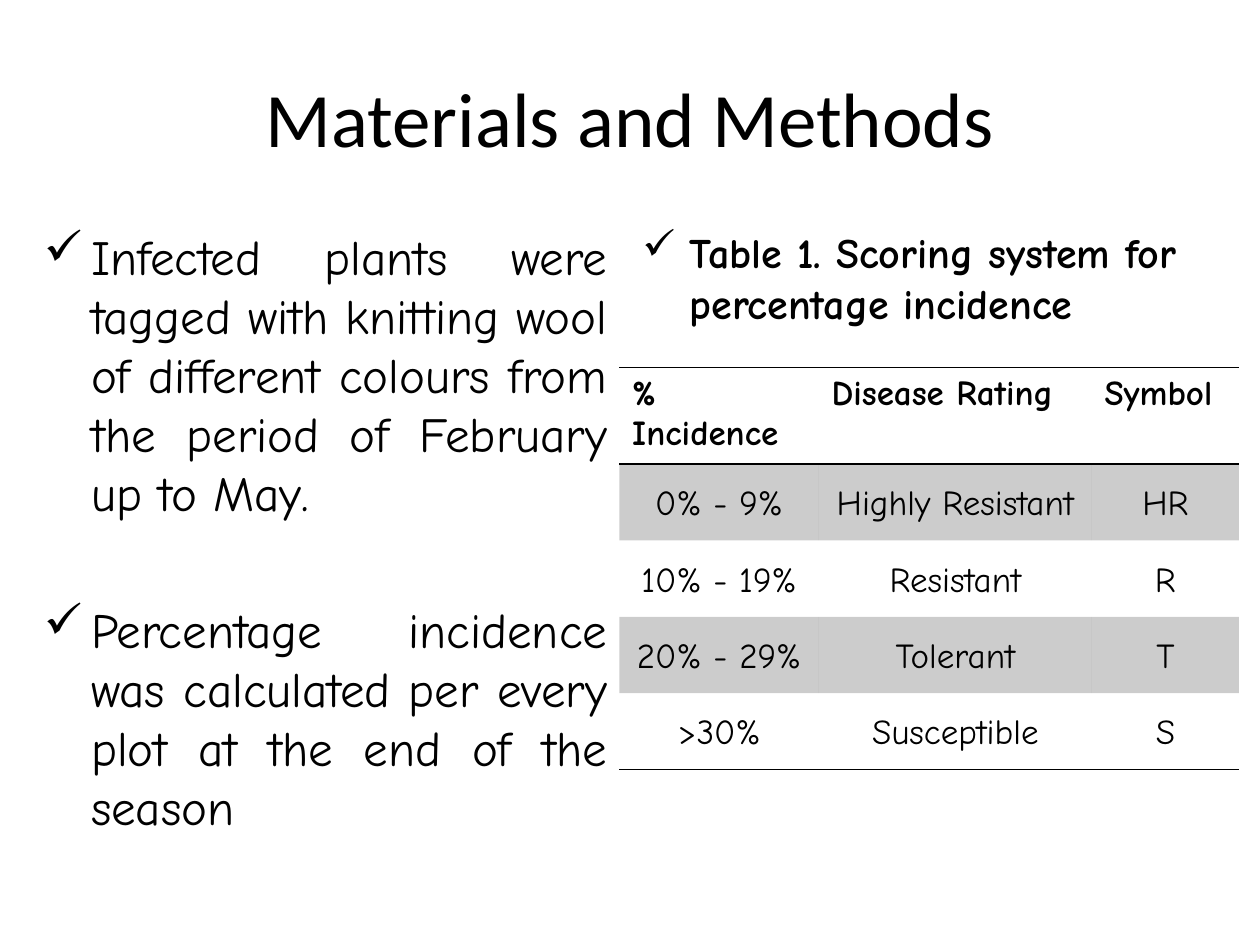
from dataclasses import dataclass

from lxml import etree
from pptx import Presentation
from pptx.dml.color import RGBColor
from pptx.enum.text import MSO_ANCHOR, PP_ALIGN
from pptx.oxml.ns import qn
from pptx.util import Pt

LEFT, CENTER, JUSTIFY = PP_ALIGN.LEFT, PP_ALIGN.CENTER, PP_ALIGN.JUSTIFY
MIDDLE = MSO_ANCHOR.MIDDLE
TITLE_ONLY = 5


@dataclass(frozen=True)
class Theme:
    ink: str = "000000"
    band_opacity: int = 20
    title_font: str = "Calibri"
    body_font: str = "Comic Neue"
    title_size: int = 44
    body_size: int = 28
    caption_size: int = 24
    table_size: int = 20
    indent: int = 27
    rule_width: int = 1


THEME = Theme()
INK = RGBColor.from_string(THEME.ink)

METHODS = [
    "Infected plants were tagged with knitting wool of different colours "
    "from the period of February up to May.",
    "Percentage incidence was calculated per every plot at the end of the season",
]
CAPTION = ["Table 1. Scoring system for percentage incidence"]
SCORES = [
    ("% Incidence", "Disease Rating", "Symbol"),
    ("0% - 9%", "Highly Resistant", "HR"),
    ("10% - 19%", "Resistant", "R"),
    ("20% - 29%", "Tolerant", "T"),
    (">30%", "Susceptible", "S"),
]
COLUMN_WIDTHS = (114, 156, 84)
HEADER_HEIGHT, ROW_HEIGHT = 42, 43.6


def apply_format(target, values):
    for name, value in values.items():
        setattr(target, name, value)


def write_paragraph(paragraph, text, font, size, bold=False, **layout):
    run = paragraph.add_run()
    run.text = text
    apply_format(run.font, {"name": font, "size": Pt(size), "bold": bold})
    run.font.color.rgb = INK
    apply_format(paragraph, layout)


def add_check_bullet(paragraph):
    properties = paragraph._p.get_or_add_pPr()
    properties.set("marL", str(Pt(THEME.indent)))
    properties.set("indent", str(-Pt(THEME.indent)))
    etree.SubElement(properties, qn("a:buChar"), char="✓")


def place_title(slide, box, text):
    title = slide.shapes.title
    apply_format(title, dict(zip(("left", "top", "width", "height"), map(Pt, box))))
    title.text_frame.vertical_anchor = MIDDLE
    write_paragraph(title.text_frame.paragraphs[0], text, THEME.title_font,
                    THEME.title_size, alignment=CENTER)


def add_checklist(slide, box, items, size, alignment, bold=False, gap=0):
    frame = slide.shapes.add_textbox(*map(Pt, box)).text_frame
    frame.word_wrap = True
    for index, item in enumerate(items):
        paragraph = frame.add_paragraph() if index else frame.paragraphs[0]
        write_paragraph(paragraph, item, THEME.body_font, size, bold,
                        alignment=alignment, space_before=Pt(gap if index else 1))
        add_check_bullet(paragraph)


def set_borders(cell, ruled_sides):
    properties = cell._tc.get_or_add_tcPr()
    for position, side in enumerate("LRTB"):
        line = etree.Element(qn(f"a:ln{side}"), w=str(Pt(THEME.rule_width)))
        if side in ruled_sides:
            fill = etree.SubElement(line, qn("a:solidFill"))
            etree.SubElement(fill, qn("a:srgbClr"), val=THEME.ink)
        else:
            etree.SubElement(line, qn("a:noFill"))
        properties.insert(position, line)


def fill_cell(cell, banded):
    if not banded:
        cell.fill.background()
        return
    cell.fill.solid()
    cell.fill.fore_color.rgb = INK
    color = cell._tc.tcPr.find(f".//{qn('a:srgbClr')}")
    etree.SubElement(color, qn("a:alpha"), val=str(THEME.band_opacity * 1000))


def add_score_table(slide, left, top, rows):
    width = sum(COLUMN_WIDTHS)
    height = HEADER_HEIGHT + ROW_HEIGHT * (len(rows) - 1)
    table = slide.shapes.add_table(len(rows), len(COLUMN_WIDTHS), Pt(left), Pt(top),
                                   Pt(width), Pt(height)).table
    table.horz_banding = False
    for column, column_width in zip(table.columns, COLUMN_WIDTHS):
        column.width = Pt(column_width)
    last = len(rows) - 1
    for row_index, row in enumerate(rows):
        header = row_index == 0
        table.rows[row_index].height = Pt(HEADER_HEIGHT if header else ROW_HEIGHT)
        sides = {0: "TB", 1: "T", last: "B"}.get(row_index, "")
        for column_index, text in enumerate(row):
            cell = table.cell(row_index, column_index)
            layout = {"alignment": LEFT}
            if not header:
                layout = {"alignment": CENTER, "line_spacing": 1.5}
                apply_format(cell, {"margin_left": Pt(5), "margin_right": Pt(5),
                                    "margin_top": 0, "margin_bottom": 0})
            write_paragraph(cell.text_frame.paragraphs[0], text, THEME.body_font,
                            THEME.table_size, header, **layout)
            fill_cell(cell, row_index % 2 == 1)
            set_borders(cell, sides)


def main():
    presentation = Presentation()
    apply_format(presentation, {"slide_width": Pt(720), "slide_height": Pt(540)})
    slide = presentation.slides.add_slide(presentation.slide_layouts[TITLE_ONLY])
    place_title(slide, (36, 21.6, 648, 90), "Materials and Methods")
    add_checklist(slide, (18, 126, 336, 378), METHODS, THEME.body_size, JUSTIFY, gap=45)
    add_checklist(slide, (360, 126, 360, 372), CAPTION, THEME.caption_size, LEFT, bold=True)
    add_score_table(slide, 354, 210, SCORES)
    presentation.save("out.pptx")


if __name__ == "__main__":
    main()
